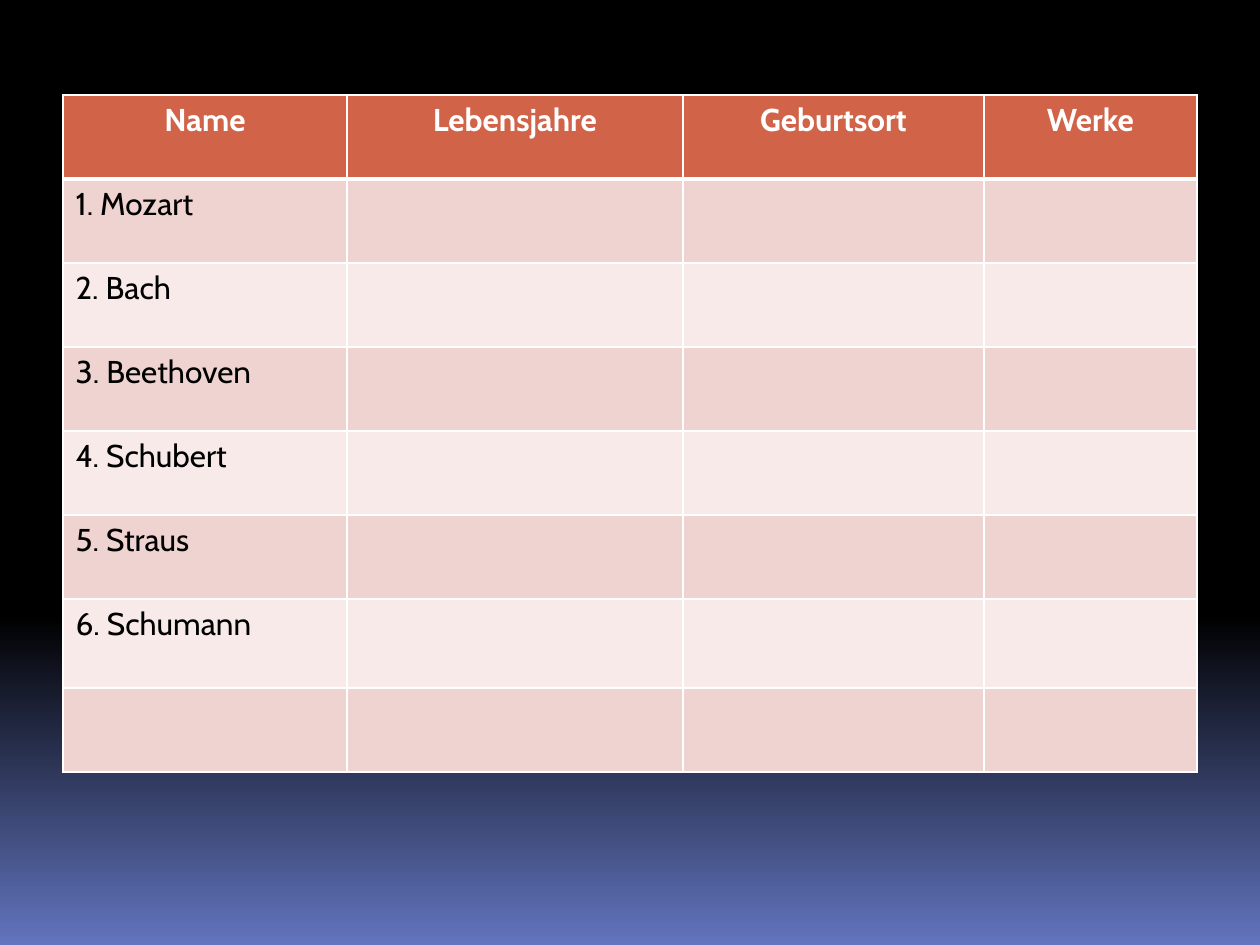
from copy import deepcopy
from dataclasses import dataclass

from lxml import etree
from pptx import Presentation
from pptx.dml.color import RGBColor
from pptx.enum.text import PP_ALIGN
from pptx.oxml.ns import qn
from pptx.util import Pt

CENTER, LEFT = PP_ALIGN.CENTER, PP_ALIGN.LEFT
EMU_PER_PX = 914400 // 126

HEADINGS = ["Name", "Lebensjahre", "Geburtsort", "Werke"]
COMPOSERS = ["Mozart", "Bach", "Beethoven", "Schubert", "Straus", "Schumann"]
COLUMN_WIDTHS = [284, 336, 301, 213]
ROW_HEIGHTS = [84] * 6 + [89, 84]
TABLE_LEFT, TABLE_TOP = 63, 95


@dataclass(frozen=True)
class Theme:
    font: str = "Cabin"
    text_size: int = 18
    header_text: str = "FFFFFF"
    body_text: str = "000000"
    header_fill: str = "D16349"
    bands: tuple = ("EED3D0", "F7EAE9")
    border: str = "FFFFFF"
    thin: int = 1
    thick: int = 3
    backdrop: tuple = ((0, "000000"), (0.65, "000000"), (1, "6274BE"))


THEME = Theme()


def px(length):
    return length * EMU_PER_PX


def rgb(value):
    return RGBColor.from_string(value)


def paint_background(page):
    fill = page.background.fill
    fill.gradient()
    fill.gradient_angle = 270
    stop_list = page.element.find(".//" + qn("a:gsLst"))
    stop_list.insert(1, deepcopy(stop_list[0]))
    for stop, (position, color) in zip(fill.gradient_stops, THEME.backdrop):
        stop.position = position
        stop.color.rgb = rgb(color)


def add_borders(cell, widths):
    """Draw the cell's edges; widths maps L, R, T and B to points."""
    properties = cell._tc.get_or_add_tcPr()
    for side, width in widths.items():
        line = etree.SubElement(properties, qn(f"a:ln{side}"), w=str(Pt(width)))
        solid = etree.SubElement(line, qn("a:solidFill"))
        etree.SubElement(solid, qn("a:srgbClr"), val=THEME.border)


def write_cell(cell, text, is_header):
    para = cell.text_frame.paragraphs[0]
    para.alignment = CENTER if is_header else LEFT
    if not text:
        para.font.size = Pt(THEME.text_size)
        return
    span = para.add_run()
    span.text = text
    text_format = {"name": THEME.font, "size": Pt(THEME.text_size), "bold": is_header}
    for name, value in text_format.items():
        setattr(span.font, name, value)
    span.font.color.rgb = rgb(THEME.header_text if is_header else THEME.body_text)


def style_cell(cell, row):
    widths = dict.fromkeys("LRTB", THEME.thin)
    if row == 0:
        widths["B"] = THEME.thick
    elif row == 1:
        widths["T"] = THEME.thick
    add_borders(cell, widths)
    cell.fill.solid()
    color = THEME.bands[(row - 1) % 2] if row else THEME.header_fill
    cell.fill.fore_color.rgb = rgb(color)


def add_composer_table(page):
    table = page.shapes.add_table(
        len(ROW_HEIGHTS), len(COLUMN_WIDTHS), px(TABLE_LEFT), px(TABLE_TOP),
        px(sum(COLUMN_WIDTHS)), px(sum(ROW_HEIGHTS))).table
    for column, width in zip(table.columns, COLUMN_WIDTHS):
        column.width = px(width)
    for row, height in zip(table.rows, ROW_HEIGHTS):
        row.height = px(height)

    names = [f"{number}. {name}" for number, name in enumerate(COMPOSERS, 1)]
    texts = {(0, column): heading for column, heading in enumerate(HEADINGS)}
    texts.update({(row, 0): name for row, name in enumerate(names, 1)})
    for row in range(len(ROW_HEIGHTS)):
        for column in range(len(COLUMN_WIDTHS)):
            cell = table.cell(row, column)
            style_cell(cell, row)
            write_cell(cell, texts.get((row, column)), row == 0)


def main():
    deck = Presentation()
    deck.slide_width, deck.slide_height = px(1260), px(945)
    page = deck.slides.add_slide(deck.slide_layouts[6])
    paint_background(page)
    add_composer_table(page)
    deck.save("out.pptx")


if __name__ == "__main__":
    main()
